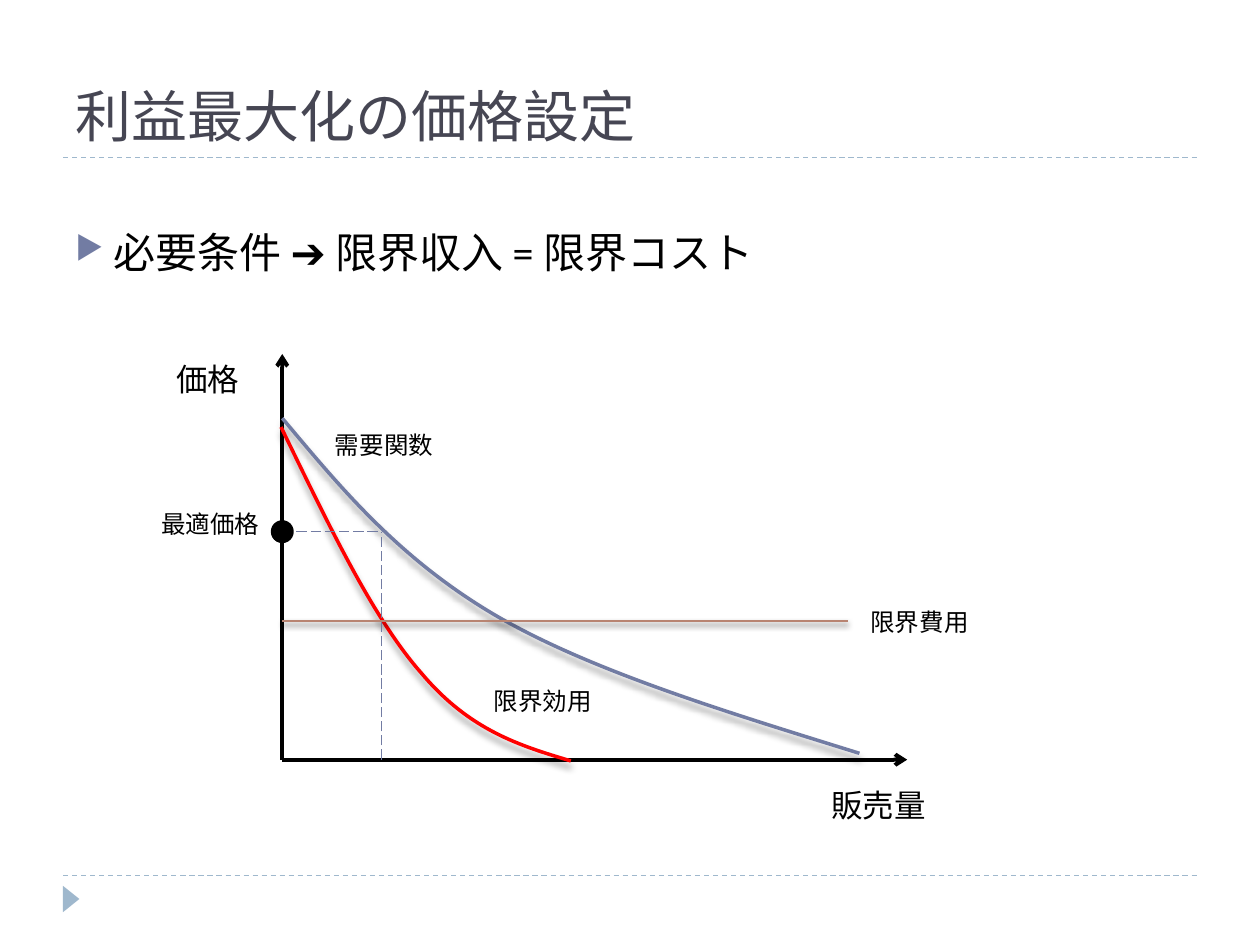
from lxml.etree import SubElement
from pptx import Presentation
from pptx.dml.color import RGBColor
from pptx.enum.dml import MSO_LINE
from pptx.enum.shapes import MSO_CONNECTOR, MSO_SHAPE
from pptx.enum.text import MSO_ANCHOR
from pptx.oxml.ns import qn
from pptx.util import Pt

BLACK, BLUE, PALE = "000000", "727CA3", "9FB8CD"
RED, BROWN, SLATE = "FF0000", "B88472", "464653"


def rgb(code):
    return RGBColor.from_string(code)


def node(parent, tag, **attrs):
    return SubElement(parent, qn(tag), attrs)


def pen(shape, color, width, dash=None):
    shape.line.color.rgb = rgb(color)
    shape.line.width = Pt(width)
    if dash:
        shape.line.dash_style = dash


def shade(shape, blur=0, dist=0):
    """Replace the theme shadow with a downward one, or with none."""
    effects = node(shape._element.spPr, "a:effectLst")
    if blur:
        drop = node(effects, "a:outerShdw", blurRad=str(Pt(blur)),
                    dist=str(Pt(dist)), dir="5400000", rotWithShape="0")
        tint = node(drop, "a:srgbClr", val=BLACK)
        node(tint, "a:alpha", val="40000")


def rule(slide, start, end, color, width, dash=None, arrow=False, glow=()):
    line = slide.shapes.add_connector(
        MSO_CONNECTOR.STRAIGHT, *(Pt(v) for v in (*start, *end)))
    pen(line, color, width, dash)
    if arrow:
        node(line.line._get_or_add_ln(), "a:tailEnd", type="arrow")
    shade(line, *glow)


def solid(slide, kind, box, color, turn=0):
    shape = slide.shapes.add_shape(kind, *(Pt(v) for v in box))
    shape.shadow.inherit = False
    shape.fill.solid()
    shape.fill.fore_color.rgb = rgb(color)
    shape.line.fill.background()
    shape.rotation = turn
    return shape


def curve(slide, points, color):
    """Draw a Bezier chain: a start point, then three points per segment."""
    start, *rest = [(Pt(x), Pt(y)) for x, y in points]
    build = slide.shapes.build_freeform(*start)
    build.add_line_segments(rest, close=False)
    shape = build.convert_to_shape()
    shape.fill.background()
    pen(shape, color, 2)
    shade(shape, 4, 3.4)
    # Merge each three straight steps into one cubic segment
    steps = list(shape._element.iter(qn("a:lnTo")))
    track = steps[0].getparent()
    for i in range(0, len(steps), 3):
        cubic = node(track, "a:cubicBezTo")
        for step in steps[i:i + 3]:
            cubic.append(step[0])
            track.remove(step)


def text(slide, words, box, size=14, font="Arial", color=BLACK,
         anchor=MSO_ANCHOR.TOP, wrap=False, bullet=None, before=0):
    frame = slide.shapes.add_textbox(*(Pt(v) for v in box)).text_frame
    frame.word_wrap = wrap
    frame.vertical_anchor = anchor
    para = frame.paragraphs[0]
    para.space_before = Pt(before)
    run = para.add_run()
    run.text = words
    run.font.size = Pt(size)
    run.font.name = font
    run.font.color.rgb = rgb(color)
    if bullet:
        props = para._p.get_or_add_pPr()
        props.set("marL", str(Pt(21.6)))
        props.set("indent", str(-Pt(21.6)))
        node(node(props, "a:buClr"), "a:srgbClr", val=BLUE)
        node(props, "a:buSzPct", val="76000")
        node(props, "a:buChar", char=bullet)


def trim(slide, left, top, width, height):
    # Dashed rules above and below the content, corner marker
    for y in (top, top + height):
        rule(slide, (left, y), (left + width, y), PALE, 0.75, MSO_LINE.DASH)
    solid(slide, MSO_SHAPE.ISOSCELES_TRIANGLE,
          (left - 2.9, top + height + 8.6, 15.1, 9.4), PALE, turn=90)


def head(slide, left, top, width):
    # Title and the condition line
    text(slide, "利益最大化の価格設定", (left, top, width, 67), size=32,
         font="Roboto Slab", color=SLATE, anchor=MSO_ANCHOR.BOTTOM, wrap=True)
    text(slide, "必要条件 ➔ 限界収入 = 限界コスト",
         (left, top + 104.4, width - 40, 47.5), size=24, font="Calibri",
         wrap=True, bullet="▶", before=6)


def plot(slide, left, top, width, height):
    base = top + height

    def at(x, y):
        """Offset from the origin of the axes, with y upward."""
        return left + x, base - y

    # Axes
    for end in ((0, height), (width, 0)):
        rule(slide, at(0, 0), at(*end), BLACK, 2.25, arrow=True)

    # Demand and marginal curves
    demand = [(0, 195.1), (33.8, 154.8), (67, 114.5), (122.4, 82.1),
              (177.1, 50.4), (253.4, 27.4), (329.8, 3.6)]
    margin = [(-0.7, 190.1), (25.9, 135.4), (51.8, 80.6), (79.9, 49),
              (107.3, 16.6), (136.1, 7.9), (164.9, -0.7)]
    for points, color in ((demand, BLUE), (margin, RED)):
        curve(slide, [at(*p) for p in points], color)

    # Marginal cost, then guides to the best price
    rule(slide, at(0, 79.2), at(323.3, 79.2), BROWN, 1.5, glow=(3, 2))
    best = (56.9, 130.3)
    for start in ((best[0], 0), (0, best[1])):
        rule(slide, at(*start), at(*best), BLUE, 0.75, MSO_LINE.LONG_DASH)
    x, y = at(0, best[1])
    dot = solid(slide, MSO_SHAPE.OVAL, (x - 5.8, y - 5.8, 11.6, 11.6), BLACK)
    pen(dot, BLACK, 1.5)

    # Labels
    for words, x, y, wide, size in (
            ("販売量", 306.7, -11.5, 69, 18),
            ("価格", -67.7, height, 51, 18),
            ("需要関数", 23, 192.2, 71.3, 14),
            ("限界効用", 113.8, 45.4, 71.3, 14),
            ("限界費用", 329, 90.7, 71.3, 14),
            ("最適価格", -76.3, 146.9, 71.3, 14)):
        text(slide, words, (*at(x, y), wide, size * 1.6 + 2), size=size)


def main():
    deck = Presentation()
    deck.slide_width, deck.slide_height = Pt(720), Pt(540)
    slide = deck.slides.add_slide(deck.slide_layouts[6])
    trim(slide, 36, 90, 648, 410.4)
    head(slide, 36, 21.6, 648)
    plot(slide, 161.3, 202.3, 357.1, 231.8)
    deck.save("out.pptx")


if __name__ == "__main__":
    main()
